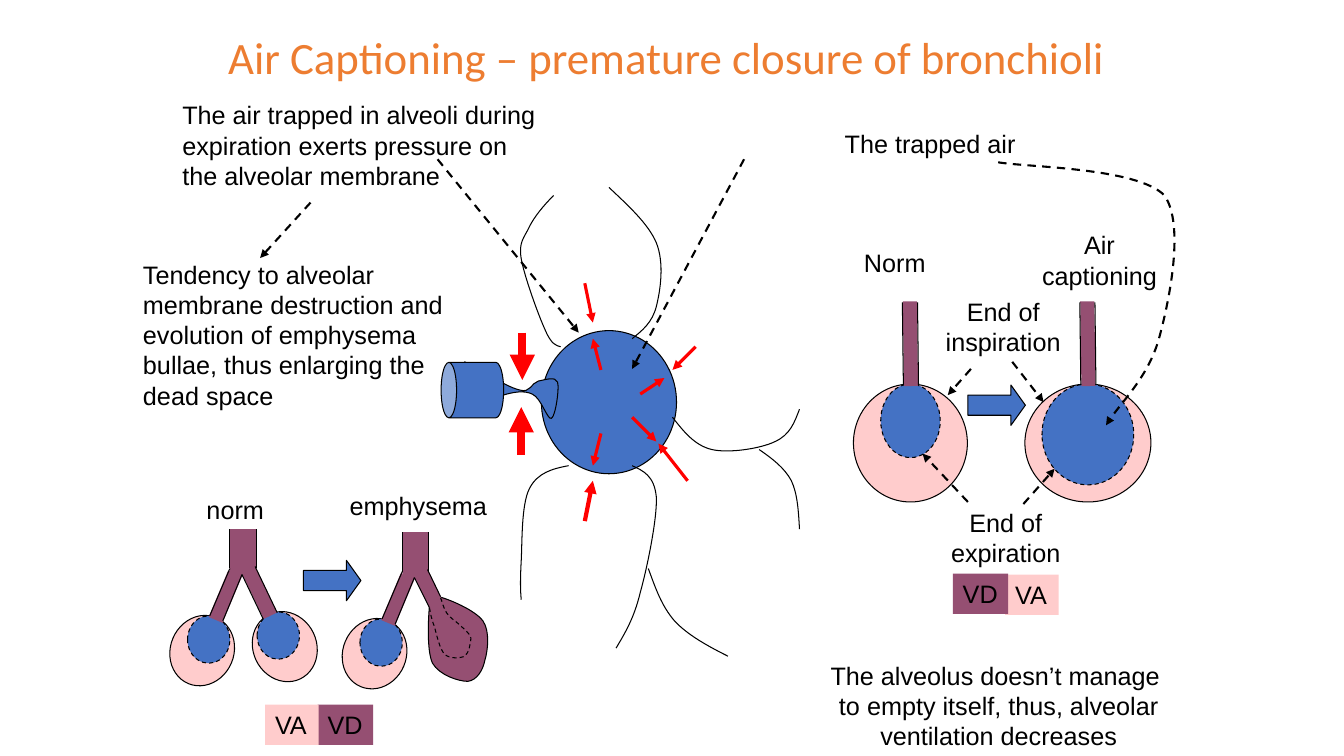
import pptx
import pptx.util
import pptx.dml.color
import pptx.enum.dml
import pptx.enum.shapes
import pptx.enum.text
import pptx.oxml.ns
import pptx.oxml.xmlchemy

Inches = pptx.util.Inches
KIND = pptx.enum.shapes.MSO_SHAPE
ALIGN = pptx.enum.text.PP_ALIGN
MIDDLE = pptx.enum.text.MSO_ANCHOR.MIDDLE
BLACK, RED, BLUE = "000000", "FF0000", "4472C4"
PINK, PLUM, ORANGE = "FFCCCC", "954F72", "ED7D31"


def tint(hue):
    return pptx.dml.color.RGBColor.from_string(hue)


def paint(shape, fill):
    if fill:
        shape.fill.solid()
        shape.fill.fore_color.rgb = tint(fill)
    else:
        shape.fill.background()


def stroke(shape, hue=BLACK, width=0.75, dash=False, arrow=False):
    shape.line.color.rgb = tint(hue)
    shape.line.width = pptx.util.Pt(width)
    if dash:
        shape.line.dash_style = pptx.enum.dml.MSO_LINE.DASH
    if arrow:
        tip = pptx.oxml.xmlchemy.OxmlElement("a:tailEnd")
        tip.set("type", "triangle")
        shape.element.spPr.find(pptx.oxml.ns.qn("a:ln")).append(tip)


def write(frame, words, size=18, font="Arial", hue=BLACK, align=ALIGN.LEFT):
    frame.text = words
    for para in frame.paragraphs:
        para.alignment = align
        for run in para.runs:
            for key, value in {"size": pptx.util.Pt(size), "name": font}.items():
                setattr(run.font, key, value)
            run.font.color.rgb = tint(hue)


def label(slide, words, box, fill=None, wrap=True, align=ALIGN.LEFT):
    shape = slide.shapes.add_textbox(*map(Inches, box))
    if fill:
        paint(shape, fill)
    shape.text_frame.word_wrap = wrap
    write(shape.text_frame, words, align=align)


def solid(slide, kind, box, fill, turn=0, edge=True, dash=False, adjust=()):
    shape = slide.shapes.add_shape(kind, *map(Inches, box))
    shape.shadow.inherit = False
    shape.rotation = turn
    for spot, value in enumerate(adjust):
        shape.adjustments[spot] = value
    paint(shape, fill)
    if edge:
        stroke(shape, dash=dash)
    else:
        shape.line.fill.background()


def line(slide, x1, y1, x2, y2, **style):
    link = slide.shapes.add_connector(
        pptx.enum.shapes.MSO_CONNECTOR.STRAIGHT, *map(Inches, (x1, y1, x2, y2)))
    stroke(link, **style)
    link.element.spPr.append(pptx.oxml.xmlchemy.OxmlElement("a:effectLst"))


def curve(slide, points, fill=None, close=False, **style):
    """Draw a chain of cubic curves: a start, then three points for each curve."""
    pen = slide.shapes.build_freeform(*map(Inches, points[0]))
    pen.add_line_segments([tuple(map(Inches, p)) for p in points[1:]], close=close)
    shape = pen.convert_to_shape()
    legs = list(shape.element.spPr.iter(pptx.oxml.ns.qn("a:lnTo")))
    for k in range(0, len(legs), 3):
        bend = pptx.oxml.xmlchemy.OxmlElement("a:cubicBezTo")
        legs[k].addprevious(bend)
        for leg in legs[k:k + 3]:
            bend.append(leg[0])
            leg.getparent().remove(leg)
    shape.shadow.inherit = False
    paint(shape, fill)
    stroke(shape, **style)


def block(slide, x, y):
    solid(slide, KIND.RIGHT_ARROW, (x, y, 0.57, 0.4), BLUE, adjust=(0.5, 0.358))


def tube(slide, box, turn=0):
    solid(slide, KIND.RECTANGLE, box, PLUM, turn, edge=False)


def sac(slide, mid, outer, width, height):
    """Draw a large alveolus with its stem, centred on mid."""
    for wide, high, fill, dash in ((outer, 1.17, PINK, False), (width, height, BLUE, True)):
        solid(slide, KIND.OVAL, (mid - wide / 2, 3.81, wide, high), fill, 359.2, dash=dash)
    tube(slide, (mid - 0.07, 2.99, 0.14, 0.84), 359.2)
    for x in (mid - 0.07, mid + 0.08):
        line(slide, x, 3.82, x - 0.01, 3)


def bud(slide, x, y, turn, shift):
    """Draw a small alveolus, its inner part moved by shift."""
    solid(slide, KIND.OVAL, (x, y, 0.63, 0.71), PINK, turn)
    solid(slide, KIND.OVAL, (x + shift, y + 0.01, 0.42, 0.47), BLUE, dash=True)


def fork(slide, x, y, ends):
    """Draw a forked airway with a left bud; ends close the right arm."""
    bud(slide, x - 0.59, y + 0.85, 22.8, 0.17)
    tube(slide, (x + 0.19, y + 0.25, 0.15, 0.64), 334.5)
    tube(slide, (x, y, 0.26, 0.47))
    tube(slide, (x - 0.12, y + 0.42, 0.15, 0.5), 22.8)
    for side in (x, x + 0.26):
        line(slide, side, y, side, y + 0.39)
    line(slide, x - 0.2, y + 0.86, x, y + 0.39)
    line(slide, x - 0.07, y + 0.91, x + 0.12, y + 0.45)
    for start, end in zip(((x + 0.25, y + 0.37), (x + 0.12, y + 0.45)), ends):
        line(slide, *start, *end)


def key(slide, *items):
    for words, box, fill in items:
        label(slide, words, box, fill, wrap=False)


def centre(slide):
    solid(slide, KIND.OVAL, (5.37, 3.28, 1.34, 1.42), BLUE)
    for points in (
            ((6.27, 3.36), (6.37, 3.28), (6.47, 3.2), (6.51, 3.04), (6.55, 2.88),
             (6.59, 2.61), (6.51, 2.41), (6.43, 2.22), (6.23, 2.04), (6.04, 1.86)),
            ((5.56, 3.44), (5.52, 3.43), (5.47, 3.42), (5.41, 3.28), (5.34, 3.13),
             (5.2, 2.74), (5.17, 2.57), (5.14, 2.4), (5.2, 2.36), (5.25, 2.25),
             (5.3, 2.15), (5.39, 2.04), (5.49, 1.94)),
            ((6.67, 4.14), (6.78, 4.28), (6.89, 4.42), (7.06, 4.46), (7.23, 4.5),
             (7.55, 4.45), (7.69, 4.38), (7.84, 4.31), (7.88, 4.19), (7.93, 4.06)),
            ((6.27, 4.62), (6.38, 4.67), (6.49, 4.72), (6.51, 4.93), (6.52, 5.14),
             (6.42, 5.63), (6.35, 5.88), (6.29, 6.13), (6.2, 6.28), (6.11, 6.43)),
            ((5.64, 4.62), (5.48, 4.65), (5.33, 4.69), (5.25, 4.85), (5.17, 5.01),
             (5.18, 5.38), (5.17, 5.56), (5.16, 5.74), (5.16, 5.85), (5.17, 5.95)),
            ((6.43, 5.64), (6.5, 5.83), (6.56, 6.01), (6.69, 6.16), (6.82, 6.3),
             (7.02, 6.41), (7.22, 6.51)),
            ((7.53, 4.46), (7.66, 4.55), (7.78, 4.64), (7.85, 4.77), (7.91, 4.9),
             (7.92, 5.07), (7.93, 5.25))):
        curve(slide, points)
    for width, *ends in (
            (2.25, 5.8, 2.81, 5.88, 3.2), (3, 5.8, 5.17, 5.88, 4.77),
            (6, 5.17, 4.51, 5.17, 4.04), (6, 5.18, 3.3, 5.18, 3.77),
            (2.25, 6.9, 3.44, 6.67, 3.67), (2.25, 6.82, 4.77, 6.53, 4.4),
            (2.25, 6.27, 4.14, 6.51, 4.38), (2.25, 6.35, 3.91, 6.59, 3.75),
            (2.25, 5.96, 3.67, 5.88, 3.36), (2.25, 5.96, 4.3, 5.88, 4.62)):
        line(slide, *ends, hue=RED, width=width, arrow=True)
    neck = ((4.66, 4.11), (4.77, 4.03), (4.88, 3.95), (4.99, 3.92), (5.09, 3.89),
            (5.2, 3.87), (5.28, 3.91), (5.37, 3.95), (5.43, 4.17), (5.47, 4.15),
            (5.51, 4.13), (5.55, 3.85), (5.53, 3.79), (5.51, 3.73), (5.4, 3.77),
            (5.34, 3.78), (5.27, 3.8), (5.26, 3.9), (5.16, 3.87), (5.05, 3.85),
            (4.79, 3.69), (4.7, 3.64), (4.61, 3.59), (4.61, 3.59), (4.61, 3.59))
    curve(slide, neck, BLUE, close=True)
    solid(slide, KIND.CAN, (4.41, 3.56, 0.55, 0.62), BLUE, 270, adjust=(0.279,))


def right(slide):
    sac(slide, 9.03, 1.13, 0.59, 0.73)
    sac(slide, 10.79, 1.25, 0.91, 1)
    block(slide, 9.6, 3.82)
    curve(slide, ((9.9, 1.61), (10.17, 1.66), (11.28, 1.66), (11.55, 1.94), (11.75, 2.23),
                  (11.6, 2.97), (11.5, 3.34), (11.4, 3.72), (11.08, 4.03), (10.97, 4.22)),
          width=1.5, dash=True, arrow=True)
    key(slide, ("VA", (9.97, 5.7, 0.53, 0.4), PINK), ("VD", (9.45, 5.69, 0.55, 0.4), PLUM))


def lower(slide):
    bulla = ((4.35, 5.92), (4.44, 5.94), (4.71, 6.05), (4.79, 6.16), (4.86, 6.26),
             (4.84, 6.45), (4.81, 6.55), (4.79, 6.65), (4.73, 6.75), (4.64, 6.76),
             (4.55, 6.76), (4.36, 6.7), (4.29, 6.58), (4.23, 6.45), (4.25, 6.12),
             (4.26, 6.01), (4.27, 5.9), (4.34, 5.94), (4.35, 5.92))
    curve(slide, bulla, PLUM, close=True)
    bud(slide, 2.51, 6.06, 334.5, 0.04)
    fork(slide, 2.28, 5.25, ((2.75, 6.08), (2.61, 6.14)))
    fork(slide, 3.99, 5.28, ((4.37, 5.92), (4.26, 6.03)))
    curve(slide, ((4.26, 6.03), (4.27, 6.09), (4.28, 6.14), (4.31, 6.22), (4.33, 6.29),
                  (4.36, 6.44), (4.41, 6.49), (4.46, 6.54), (4.57, 6.53), (4.61, 6.51),
                  (4.65, 6.48), (4.67, 6.38), (4.67, 6.33), (4.66, 6.28), (4.6, 6.24),
                  (4.56, 6.2), (4.52, 6.16), (4.46, 6.13), (4.43, 6.08), (4.4, 6.04),
                  (4.38, 5.95), (4.37, 5.93)), PLUM, dash=True)
    block(slide, 3.01, 5.56)
    key(slide, ("VD", (3.15, 6.99, 0.55, 0.4), PLUM), ("VA", (2.63, 6.99, 0.53, 0.4), PINK))


def notes(slide):
    for words, box in (
            ("The air trapped in alveoli during expiration exerts pressure on "
             "the alveolar membrane", (1.71, 0.94, 3.75, 1)),
            ("Tendency to alveolar membrane destruction and evolution of emphysema "
             "bullae, thus enlarging the dead space", (1.32, 2.52, 3.2, 1.6))):
        label(slide, words, box)
    for words, box in (
            ("The trapped air", (7.08, 1.22, 4.29, 0.4)),
            ("Air captioning", (10.21, 2.23, 1.39, 0.7)),
            ("End of inspiration", (9.18, 2.89, 1.54, 0.7)),
            ("End of expiration", (9.25, 4.98, 1.45, 0.7)),
            ("The alveolus doesn’t manage \nto empty itself, thus, alveolar "
             "ventilation decreases", (7.93, 6.5, 3.95, 1))):
        label(slide, words, box, align=ALIGN.CENTER)
    key(slide, ("Norm", (8.47, 2.4, 0.81, 0.4), None),
        ("norm", (1.95, 4.86, 0.77, 0.4), None),
        ("emphysema", (3.37, 4.82, 1.56, 0.4), None))
    for ends in ((4.34, 1.58, 5.74, 3.3), (7.38, 1.58, 6.27, 3.66),
                 (3.08, 2.01, 2.58, 2.56), (10.15, 5, 10.46, 4.65),
                 (9.6, 4.98, 9.15, 4.5), (9.63, 3.66, 9.4, 3.92),
                 (10.04, 3.59, 10.35, 3.99)):
        line(slide, *ends, width=1.5, dash=True, arrow=True)


def head(slide):
    title = slide.shapes.title
    place = zip(("left", "top", "width", "height"), (2.11, -0.03, 9, 1.25))
    for side, value in place:
        setattr(title, side, Inches(value))
    frame = title.text_frame
    write(frame, "Air Captioning – premature closure of bronchioli",
          32, "Calibri", ORANGE, ALIGN.CENTER)
    frame.vertical_anchor = MIDDLE
    frame.paragraphs[0].line_spacing = 0.9


def main():
    deck = pptx.Presentation()
    deck.slide_width, deck.slide_height = Inches(13.33), Inches(7.5)
    slide = deck.slides.add_slide(deck.slide_layouts[5])
    for draw in (head, centre, right, lower, notes):
        draw(slide)
    deck.save("out.pptx")


if __name__ == "__main__":
    main()
